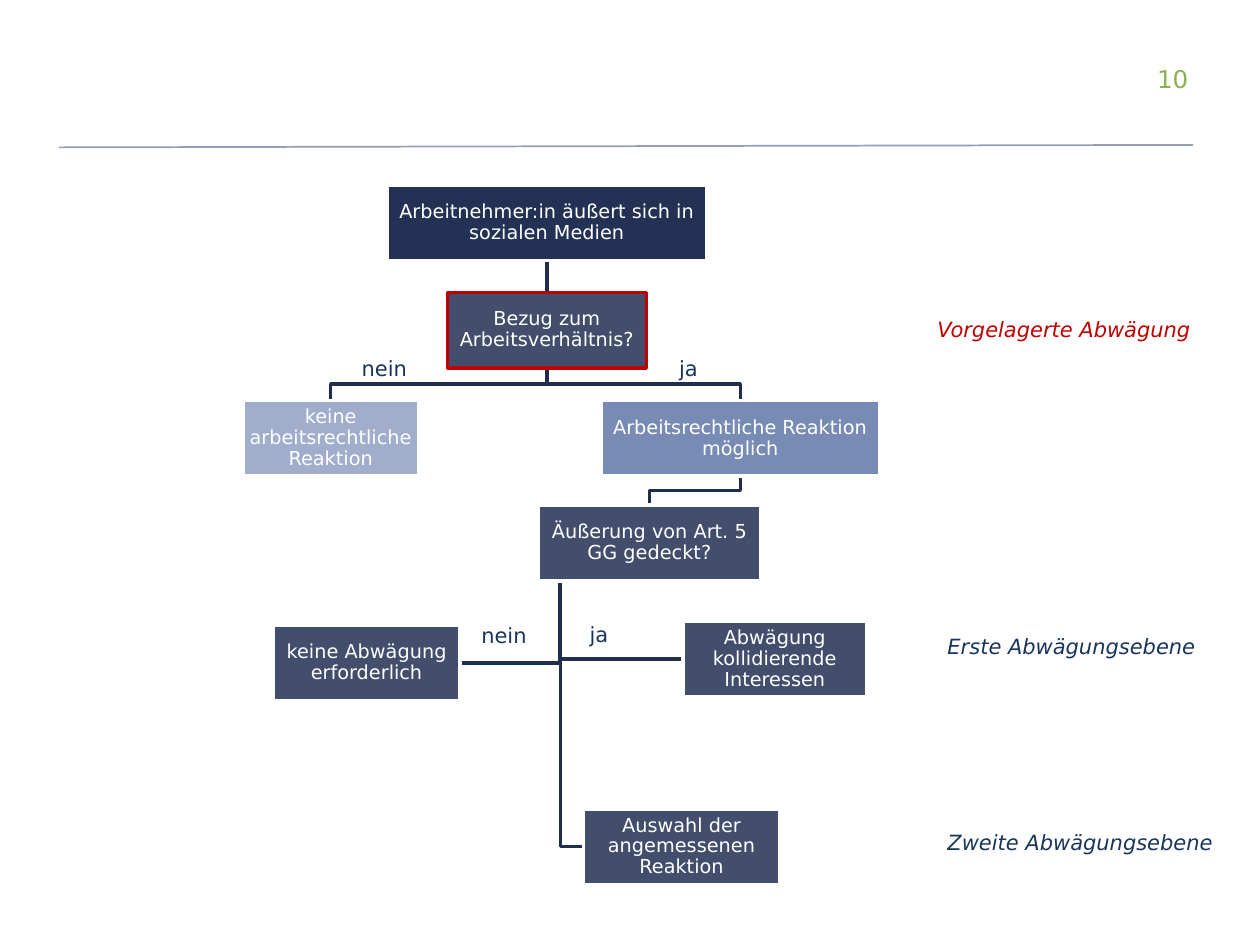
from lxml import etree
from pptx import Presentation, util as u
from pptx.dml.color import RGBColor
from pptx.enum import shapes, text
from pptx.oxml.ns import qn

FONT = "DejaVu Sans"
COLORS = {
    "navy": "233254", "blue": "788BB5", "branch": "202D4C", "label": "19355C",
    "red": "C00000", "green": "8DB053", "rule": "949EB7", "white": "FFFFFF",
}

prs = Presentation()
prs.slide_width, prs.slide_height = u.Inches(10), u.Inches(7.5)
COL, ROW = prs.slide_width / 10, prs.slide_height / 7.5   # grid of 10 x 7.5
BOX_ROWS = 0.6

# Flowchart steps: left, top, width (grid units from the chart's corner),
# fill, opacity in percent, border, wording
STEPS = {
    "post": (1.14, 0, 2.54, "navy", 100, "white", "Arbeitnehmer:in äußert sich in sozialen Medien"),
    "job_link": (1.62, 0.85, 1.58, "navy", 86, "red", "Bezug zum Arbeitsverhältnis?"),
    "no_reaction": (0, 1.71, 1.39, "blue", 70, "white", "keine arbeitsrechtliche Reaktion"),
    "reaction": (2.84, 1.71, 2.21, "blue", 100, "white", "Arbeitsrechtliche Reaktion möglich"),
    "article_5": (2.34, 2.54, 1.77, "navy", 86, "white", "Äußerung von Art. 5 GG gedeckt?"),
    "no_weighing": (0.24, 3.49, 1.48, "navy", 86, "white", "keine Abwägung erforderlich"),
    "weighing": (3.49, 3.46, 1.46, "navy", 86, "white", "Abwägung kollidierende Interessen"),
    "choice": (2.7, 4.95, 1.56, "navy", 86, "white", "Auswahl der angemessenen Reaktion"),
}
ELBOWS = [("reaction", "article_5"), ("job_link", "reaction"), ("job_link", "no_reaction")]
TRUNK_ENDS = ["choice", "weighing", "no_weighing"]

# Free labels: left, top, colour, italic, wording
ANSWERS = [(2.87, 2.82, "label", False, "nein"), (5.39, 2.82, "label", False, "ja"),
           (3.82, 4.94, "label", False, "nein"), (4.68, 4.93, "label", False, "ja")]
LEVELS = [(7.44, 2.51, "red", True, "Vorgelagerte Abwägung"),
          (7.52, 5.03, "label", True, "Erste Abwägungsebene"),
          (7.52, 6.58, "label", True, "Zweite Abwägungsebene")]


def color(name):
    return RGBColor.from_string(COLORS[name])


def grid(x, y):
    return round(x * COL), round(y * ROW)


def write(frame, wording, size, ink, align, anchor, inset=0, italic=False):
    frame.margin_left = frame.margin_right = u.Inches(inset)
    frame.margin_top = frame.margin_bottom = u.Inches(min(inset, 0.01))
    frame.vertical_anchor = anchor
    paragraph = frame.paragraphs[0]
    paragraph.text = wording
    paragraph.alignment = align
    font = paragraph.font
    font.name, font.size, font.italic = FONT, u.Pt(size), italic
    font.color.rgb = color(ink)
    return paragraph


def add_line(slide, start, end, ink, width):
    line = slide.shapes.add_connector(shapes.MSO_CONNECTOR.STRAIGHT, *start, *end)
    line.line.color.rgb, line.line.width = color(ink), u.Pt(width)
    etree.SubElement(line._element.spPr, qn("a:effectLst"))
    return line


def add_branch(slide, points):
    builder = slide.shapes.build_freeform(*grid(*points[0]))
    builder.add_line_segments([grid(*point) for point in points[1:]], close=False)
    branch = builder.convert_to_shape()
    branch.shadow.inherit = False
    branch.fill.background()
    branch.line.color.rgb, branch.line.width = color("branch"), u.Pt(2)


def add_step(slide, left, top, width, fill, opacity, border, wording):
    step = slide.shapes.add_shape(shapes.MSO_SHAPE.RECTANGLE,
                                  *grid(left, top), *grid(width, BOX_ROWS))
    step.shadow.inherit = False
    step.fill.solid()
    step.fill.fore_color.rgb = color(fill)
    if opacity < 100:
        tone = step._element.spPr.find(qn("a:solidFill"))[0]
        etree.SubElement(tone, qn("a:alpha"), val=str(opacity * 1000))
    step.line.color.rgb, step.line.width = color(border), u.Pt(2)
    step.text_frame.word_wrap = True
    paragraph = write(step.text_frame, wording, 11, "white", text.PP_ALIGN.CENTER,
                      text.MSO_ANCHOR.MIDDLE, inset=0.01)
    paragraph.line_spacing = 0.9
    return step


def add_header(slide, left, top, width, height):
    number = slide.shapes.add_textbox(*grid(left + width - 2.3, top), *grid(2.36, 0.28))
    write(number.text_frame, "10", 14, "green", text.PP_ALIGN.RIGHT,
          text.MSO_ANCHOR.BOTTOM, inset=0.1)
    add_line(slide, grid(left, top + height), grid(left + width, top + height - 0.02), "rule", 1)


def add_flowchart(slide, left, top):
    places = {key: (left + x, top + y, width)
              for key, (x, y, width, *_) in STEPS.items()}

    def middle(key):
        x, _, width = places[key]
        return x + width / 2

    # Branches that run down the trunk, then sideways to a step
    trunk_left, trunk_top, trunk_width = places["article_5"]
    trunk = trunk_left + trunk_width / 10
    for key in TRUNK_ENDS:
        x, y, width = places[key]
        level = y + BOX_ROWS / 2
        near_side = x if x > trunk else x + width
        add_branch(slide, [(trunk, trunk_top + BOX_ROWS), (trunk, level), (near_side, level)])

    # Branches that turn halfway between two steps
    for parent, child in ELBOWS:
        start, end = places[parent][1] + BOX_ROWS, places[child][1]
        halfway = (start + end) / 2
        add_branch(slide, [(middle(parent), start), (middle(parent), halfway),
                           (middle(child), halfway), (middle(child), end)])

    # The straight link lies behind the steps, so it is drawn before them
    link = add_line(slide, grid(middle("post"), places["post"][1] + BOX_ROWS),
                    grid(middle("job_link"), places["job_link"][1]), "branch", 2)
    steps = {key: add_step(slide, *places[key], *look)
             for key, (_, _, _, *look) in STEPS.items()}
    link.begin_connect(steps["post"], 2)
    link.end_connect(steps["job_link"], 0)


def add_labels(slide, labels, width, height):
    for left, top, ink, italic, wording in labels:
        label = slide.shapes.add_textbox(*grid(left, top), *grid(width, height))
        label.text_frame.word_wrap = False
        write(label.text_frame, wording, 12, ink, text.PP_ALIGN.LEFT,
              text.MSO_ANCHOR.TOP, italic=italic)


def main():
    slide = prs.slides.add_slide(prs.slide_layouts[6])
    add_header(slide, 0.47, 0.47, 9, 0.7)
    add_flowchart(slide, 1.93, 1.47)
    add_labels(slide, ANSWERS, 0.68, 0.29)
    add_labels(slide, LEVELS, 2.3, 0.29)
    prs.save("out.pptx")


if __name__ == "__main__":
    main()
